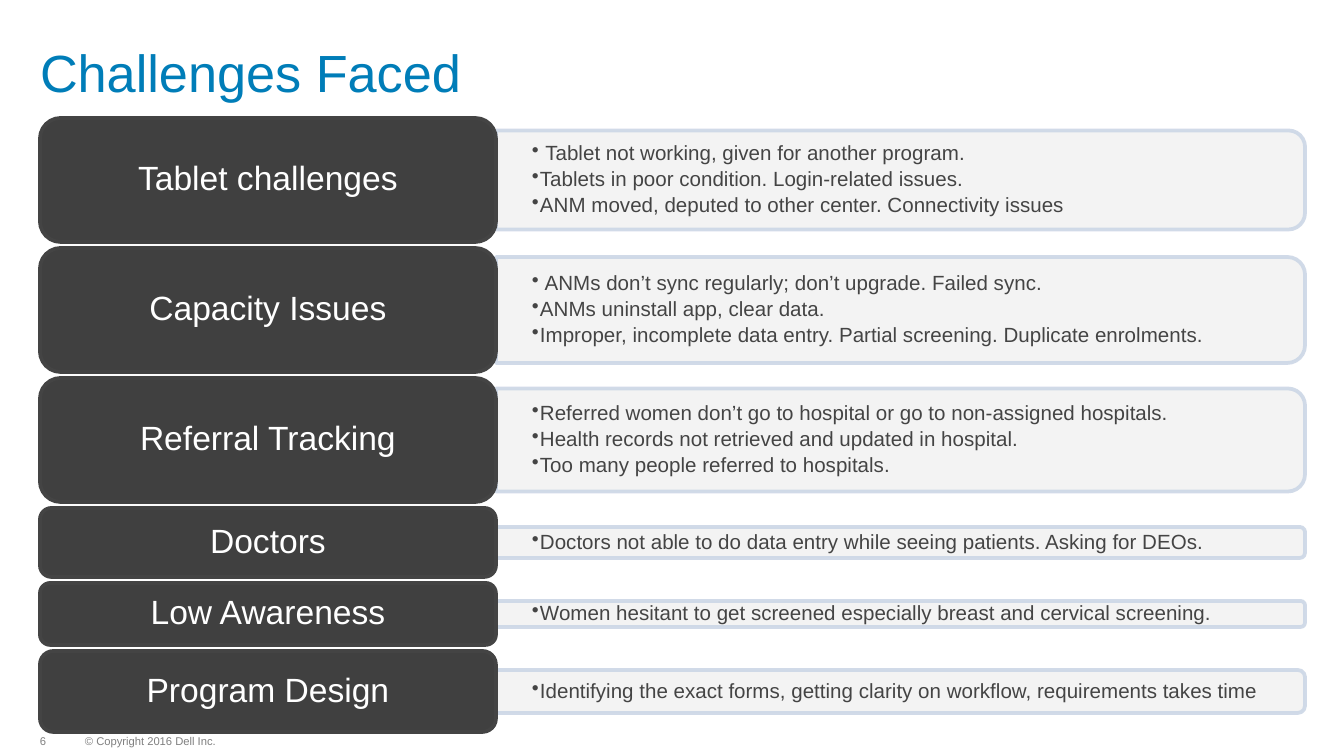
import dataclasses

import lxml.etree
import pptx
import pptx.dml.color
import pptx.enum.shapes
import pptx.enum.text
import pptx.oxml.ns
import pptx.util

EMU_PER_PX = 914400 / 134.4
SLIDE_WIDTH, SLIDE_HEIGHT = 1344, 756
LEFT = 40
FIRST_TOP, ROW_GAP = 118, 6
LABEL_WIDTH, BAR_WIDTH = 456, 809


@dataclasses.dataclass(frozen=True)
class Theme:
    font: str = "Arial"
    title: str = "007DB8"
    label: str = "404040"
    label_line: str = "444444"
    label_text: str = "FFFFFF"
    bar: str = "F2F2F2"
    bar_line: str = "CCD7E6"
    body: str = "444444"
    copyright: str = "7F7F7F"
    number: str = "808080"
    title_size: int = 28
    label_size: int = 18
    body_size: int = 11
    footer_size: int = 6
    line_width: int = 2
    line_spacing: float = 0.9
    bar_opacity: int = 90


THEME = Theme()

ROWS = [
    ("Tablet challenges", 124, 99, [
        " Tablet not working, given for another program.",
        "Tablets in poor condition. Login-related issues.",
        "ANM moved, deputed to other center. Connectivity issues",
    ]),
    ("Capacity Issues", 124, 106, [
        " ANMs don’t sync regularly; don’t upgrade. Failed sync.",
        "ANMs uninstall app, clear data.",
        "Improper, incomplete data entry. Partial screening. Duplicate enrolments.",
    ]),
    ("Referral Tracking", 124, 103, [
        "Referred women don’t go to hospital or go to non-assigned hospitals.",
        "Health records not retrieved and updated in hospital.",
        "Too many people referred to hospitals.",
    ]),
    ("Doctors", 69, 31, [
        "Doctors not able to do data entry while seeing patients. Asking for DEOs.",
    ]),
    ("Low Awareness", 62, 26, [
        "Women hesitant to get screened especially breast and cervical screening.",
    ]),
    ("Program Design", 81, 43, [
        "Identifying the exact forms, getting clarity on workflow, requirements takes time",
    ]),
]


def px(value):
    return pptx.util.Emu(round(value * EMU_PER_PX))


def color(value):
    return pptx.dml.color.RGBColor.from_string(value)


def set_opacity(fill, percent):
    for element in fill.iter(pptx.oxml.ns.qn("a:srgbClr")):
        alpha = lxml.etree.SubElement(element, pptx.oxml.ns.qn("a:alpha"))
        alpha.set("val", str(percent * 1000))


def add_bullet(paragraph, indent):
    properties = paragraph._p.get_or_add_pPr()
    properties.set("marL", str(px(indent)))
    properties.set("indent", str(px(-indent)))
    bullet = lxml.etree.SubElement(properties, pptx.oxml.ns.qn("a:buChar"))
    bullet.set("char", "•")


def write_text(shape, lines, size, text_color, margins=(0, 0), bulleted=False,
               alignment=pptx.enum.text.PP_ALIGN.LEFT,
               anchor=pptx.enum.text.MSO_ANCHOR.MIDDLE):
    frame = shape.text_frame
    frame.word_wrap = True
    frame.vertical_anchor = anchor
    frame.margin_left = frame.margin_right = px(margins[0])
    frame.margin_top = frame.margin_bottom = px(margins[1])
    for index, line in enumerate(lines):
        paragraph = frame.add_paragraph() if index else frame.paragraphs[0]
        paragraph.text = line
        if bulleted:
            add_bullet(paragraph, 8)
            paragraph.space_after = pptx.util.Pt(2)
        paragraph.alignment = alignment
        paragraph.line_spacing = THEME.line_spacing
        paragraph.font.name = THEME.font
        paragraph.font.size = pptx.util.Pt(size)
        paragraph.font.color.rgb = color(text_color)


def add_text(slide, left, top, width, height, lines, size, text_color, **options):
    box = slide.shapes.add_textbox(px(left), px(top), px(width), px(height))
    write_text(box, lines, size, text_color, **options)


def add_rounded(slide, kind, left, top, width, height, fill, line):
    shape = slide.shapes.add_shape(kind, px(left), px(top), px(width), px(height))
    shape.shadow.inherit = False
    shape.fill.solid()
    shape.fill.fore_color.rgb = color(fill)
    shape.line.color.rgb = color(line)
    shape.line.width = pptx.util.Pt(THEME.line_width)
    return shape


def add_bar(slide, left, middle, height, lines):
    bar = add_rounded(
        slide, pptx.enum.shapes.MSO_SHAPE.ROUND_2_SAME_RECTANGLE,
        left + (BAR_WIDTH - height) / 2, middle - BAR_WIDTH / 2,
        height, BAR_WIDTH, THEME.bar, THEME.bar_line)
    bar.rotation = 90
    set_opacity(bar._element.spPr, THEME.bar_opacity)
    add_text(slide, left, middle - height / 2, BAR_WIDTH, height, lines,
             THEME.body_size, THEME.body, margins=(36, 0), bulleted=True)


def add_label(slide, top, height, text):
    label = add_rounded(
        slide, pptx.enum.shapes.MSO_SHAPE.ROUNDED_RECTANGLE,
        LEFT, top, LABEL_WIDTH, height, THEME.label, THEME.label_line)
    write_text(label, [text], THEME.label_size, THEME.label_text, margins=(9, 5),
               alignment=pptx.enum.text.PP_ALIGN.CENTER)


def main():
    presentation = pptx.Presentation()
    presentation.slide_width = px(SLIDE_WIDTH)
    presentation.slide_height = px(SLIDE_HEIGHT)
    slide = presentation.slides.add_slide(presentation.slide_layouts[6])

    add_text(slide, 85, 736, 160, 12, ["© Copyright 2016 Dell Inc."],
             THEME.footer_size, THEME.copyright)
    add_text(slide, LEFT, 736, 13, 12, ["6"], THEME.footer_size, THEME.number)
    add_text(slide, LEFT, 40, 1169, 94, ["Challenges Faced"], THEME.title_size,
             THEME.title, margins=(0, 7), anchor=pptx.enum.text.MSO_ANCHOR.TOP)

    top = FIRST_TOP
    for name, label_height, bar_height, points in ROWS:
        add_bar(slide, LEFT + LABEL_WIDTH, top + label_height / 2, bar_height, points)
        add_label(slide, top, label_height, name)
        top += label_height + ROW_GAP

    presentation.save("out.pptx")


if __name__ == "__main__":
    main()
